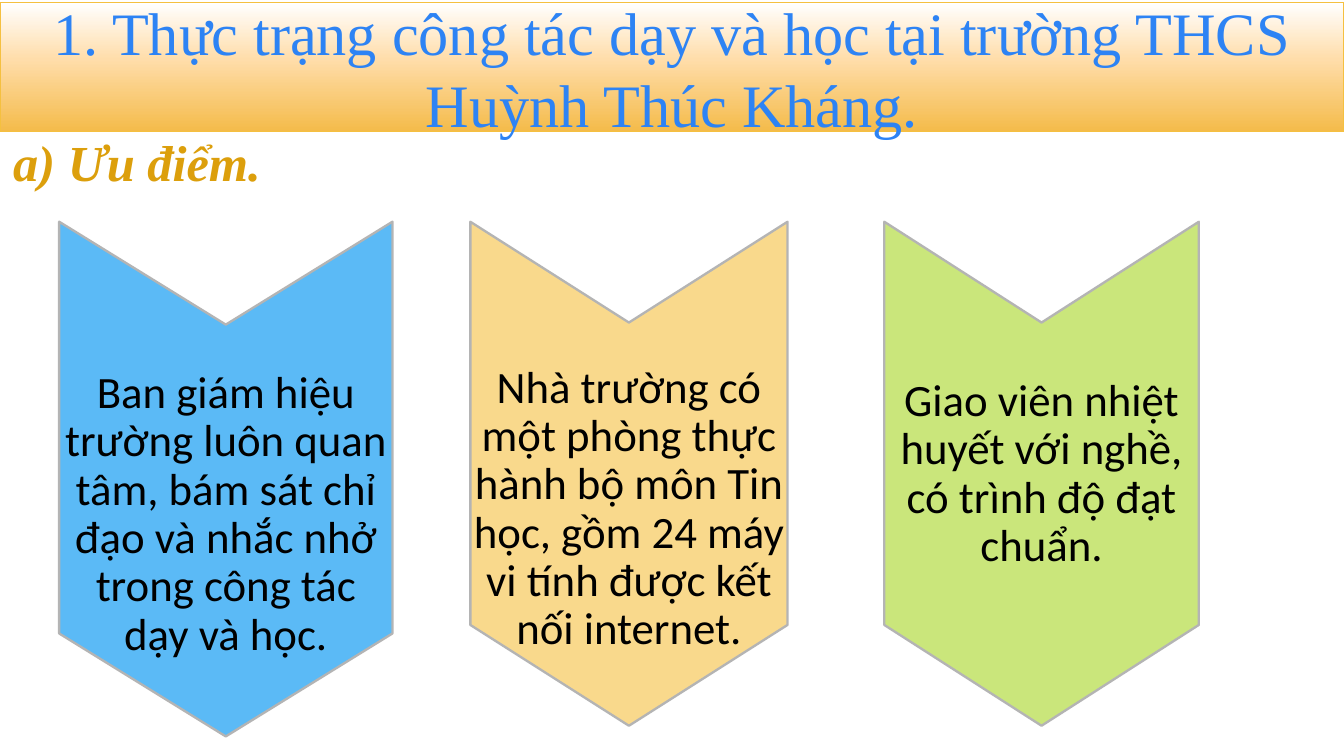
from copy import deepcopy

from pptx import Presentation
from pptx.dml.color import RGBColor
from pptx.enum.shapes import MSO_SHAPE
from pptx.enum.text import MSO_ANCHOR, PP_ALIGN
from pptx.util import Inches, Pt

RECTANGLE = MSO_SHAPE.RECTANGLE
MIDDLE = MSO_ANCHOR.MIDDLE
LEFT, CENTER = PP_ALIGN.LEFT, PP_ALIGN.CENTER

THEME = {
    "heading_font": "Times New Roman",
    "body_font": "Calibri",
    "banner_size": 32.3,
    "subtitle_size": 27,
    "body_size": 24,
    "banner_text": "2D83F4",
    "banner_line": "F5C040",
    "banner_stops": [(0, "FFFFFF"), (0.44, "FFDDAA"), (1, "F4BB4A")],
    "subtitle_text": "DC9F0C",
    "chevron_line": "B4B4B4",
    "body_text": "000000",
}

SLIDE_WIDTH = 10
SLIDE_HEIGHT = SLIDE_WIDTH * 9 / 16
BANNER = "1. Thực trạng công tác dạy và học tại trường THCS Huỳnh Thúc Kháng."
SUBTITLE = "a) Ưu điểm."
CHEVRON_TOP = 1.65
TIP_SHARE = 0.2
CHEVRONS = [
    {"left": 0.44, "width": 2.48, "height": 3.83, "fill": "5BBAF6", "text_drop": 0.53,
     "text": "Ban giám hiệu trường luôn quan tâm, bám sát chỉ đạo và nhắc nhở "
             "trong công tác dạy và học."},
    {"left": 3.5, "width": 2.36, "height": 3.75, "fill": "F9D98C", "text_drop": 0.53,
     "text": "Nhà trường có một phòng thực hành bộ môn Tin học, gồm 24 máy vi tính "
             "được kết nối internet."},
    {"left": 6.58, "width": 2.34, "height": 3.75, "fill": "CAE67B", "text_drop": 0.01,
     "text": "Giao viên nhiệt huyết với nghề, có trình độ đạt chuẩn."},
]


def color(name):
    return RGBColor.from_string(THEME.get(name, name))


def write(shape, text, font, size, text_color, alignment, margins=(0.1, 0.05, 0.1, 0.05)):
    frame = shape.text_frame
    frame.word_wrap = True
    frame.vertical_anchor = MIDDLE
    frame.margin_left, frame.margin_top, frame.margin_right, frame.margin_bottom = map(Inches, margins)
    paragraph = frame.paragraphs[0]
    paragraph.text = text
    paragraph.alignment = alignment
    paragraph.font.name = THEME[font]
    paragraph.font.size = Pt(THEME[size])
    paragraph.font.color.rgb = color(text_color)
    return paragraph


def outline(shape, line_color, width):
    shape.shadow.inherit = False
    shape.line.color.rgb = color(line_color)
    shape.line.width = Pt(width)


def add_banner(slide):
    shape = slide.shapes.add_shape(RECTANGLE, 0, Inches(0.02), Inches(SLIDE_WIDTH), Inches(0.96))
    outline(shape, "banner_line", 0.75)
    shape.fill.gradient()
    shape.fill.gradient_angle = 270
    first_stop = shape._element.xpath(".//a:gs")[0]
    first_stop.addnext(deepcopy(first_stop))
    for stop, (position, stop_color) in zip(shape.fill.gradient_stops, THEME["banner_stops"]):
        stop.position = position
        stop.color.rgb = color(stop_color)
    write(shape, BANNER, "heading_font", "banner_size", "banner_text", CENTER)


def add_subtitle(slide):
    box = slide.shapes.add_textbox(0, Inches(0.98), Inches(2.73), Inches(0.44))
    paragraph = write(box, SUBTITLE, "heading_font", "subtitle_size", "subtitle_text", LEFT)
    paragraph.font.bold = True
    paragraph.font.italic = True


def add_chevron(slide, chevron):
    left, width, height = chevron["left"], chevron["width"], chevron["height"]
    right, middle = left + width, left + width / 2
    bottom = CHEVRON_TOP + height
    tip = height * TIP_SHARE
    corners = [(right, CHEVRON_TOP), (right, bottom - tip), (middle, bottom),
               (left, bottom - tip), (left, CHEVRON_TOP), (middle, CHEVRON_TOP + tip)]
    points = [(Inches(x), Inches(y)) for x, y in corners]
    builder = slide.shapes.build_freeform(*points[0])
    builder.add_line_segments(points[1:], close=True)
    shape = builder.convert_to_shape()
    outline(shape, "chevron_line", 1.25)
    shape.fill.solid()
    shape.fill.fore_color.rgb = color(chevron["fill"])
    paragraph = write(shape, chevron["text"], "body_font", "body_size", "body_text", CENTER,
                      (0, chevron["text_drop"], 0, 0))
    paragraph.line_spacing = 0.9


def main():
    presentation = Presentation()
    presentation.slide_width = Inches(SLIDE_WIDTH)
    presentation.slide_height = Inches(SLIDE_HEIGHT)
    slide = presentation.slides.add_slide(presentation.slide_layouts[6])
    add_subtitle(slide)
    add_banner(slide)
    for chevron in CHEVRONS:
        add_chevron(slide, chevron)
    presentation.save("out.pptx")


if __name__ == "__main__":
    main()
